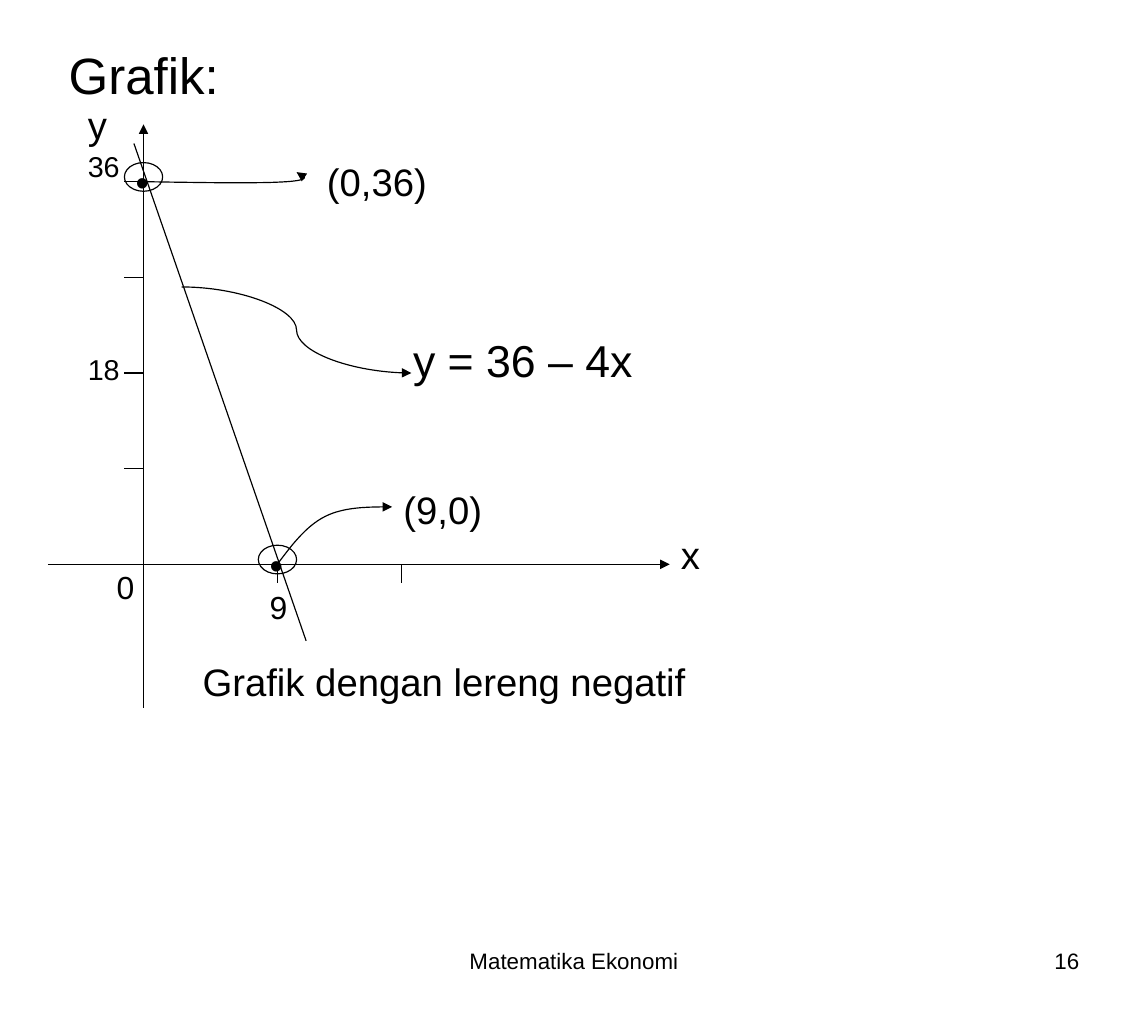
from lxml import etree
from pptx import Presentation
from pptx.dml.color import RGBColor
from pptx.enum.shapes import MSO_CONNECTOR, MSO_SHAPE
from pptx.enum.text import PP_ALIGN
from pptx.oxml.ns import qn
from pptx.util import Pt

PX = 7620  # 120 px to the inch
COLORS = {"ink": "000000", "paper": "FFFFFF"}
INK = RGBColor.from_string(COLORS["ink"])
LEFT, CENTER, RIGHT = PP_ALIGN.LEFT, PP_ALIGN.CENTER, PP_ALIGN.RIGHT
STRAIGHT, CURVE = MSO_CONNECTOR.STRAIGHT, MSO_CONNECTOR.CURVE
OVAL = MSO_SHAPE.OVAL
CURVE_STEPS = 16

deck = Presentation()
deck.slide_width, deck.slide_height = 1200 * PX, 1080 * PX
page = deck.slides.add_slide(deck.slide_layouts[6])
page.background.fill.solid()
page.background.fill.fore_color.rgb = RGBColor.from_string(COLORS["paper"])
shapes = page.shapes


def add_text(text, left, top, width, height, size=24, align=LEFT):
    box = shapes.add_textbox(left * PX, top * PX, width * PX, height * PX)
    box.text_frame.word_wrap = True
    para = box.text_frame.paragraphs[0]
    para.alignment = align
    span = para.add_run()
    span.text = text
    span.font.name = "Arial"
    span.font.size = Pt(size)
    span.font.color.rgb = INK


def style_line(shape, arrow=False):
    shape.line.color.rgb = INK
    shape.line.width = Pt(0.75)
    properties = shape._element.spPr
    if properties.find(qn("a:effectLst")) is None:
        etree.SubElement(properties, qn("a:effectLst"))
    if arrow:
        outline = properties.find(qn("a:ln"))
        etree.SubElement(outline, qn("a:tailEnd"), type="triangle")


# Title and footer
add_text("Grafik:", 60, 40, 1080, 90, size=32)
add_text("Matematika Ekonomi", 410, 984, 380, 74, size=14, align=CENTER)
add_text("16", 860, 984, 280, 74, size=14, align=RIGHT)

# Axes, ticks, sloping line and the curve to the equation
origin_x, origin_y = 150, 590
lines = [
    (STRAIGHT, origin_x, 740, origin_x, 130, True),
    (STRAIGHT, 50, origin_y, 700, origin_y, True),
    (STRAIGHT, 140, 150, 320, 670, False),
    (CURVE, 190, 300, 430, 390, True),
]
lines += [(STRAIGHT, 130, y, origin_x, y, False) for y in range(190, origin_y, 100)]
lines += [(STRAIGHT, x, origin_y, x, 610, False) for x in (290, 420)]
for kind, x1, y1, x2, y2, arrow in lines:
    connector = shapes.add_connector(kind, x1 * PX, y1 * PX, x2 * PX, y2 * PX)
    style_line(connector, arrow)

# Rings around the intercepts
for left, top in ((130, 170), (270, 570)):
    ring = shapes.add_shape(OVAL, left * PX, top * PX, 40 * PX, 30 * PX)
    ring.shadow.inherit = False
    ring.fill.background()
    style_line(ring)

# Curved pointers from the intercepts, as chains of cubic Bézier curves
pointers = [
    [(150, 190), (211, 191), (273, 192), (300, 190), (327, 188), (318, 184), (310, 180)],
    [(290, 590), (305, 570), (320, 550), (340, 540), (360, 530), (385, 530), (410, 530)],
]
for controls in pointers:
    points = []
    for first in range(0, len(controls) - 1, 3):
        for step in range(1, CURVE_STEPS + 1):
            t = step / CURVE_STEPS
            weights = ((1 - t) ** 3, 3 * t * (1 - t) ** 2, 3 * t * t * (1 - t), t ** 3)
            segment = list(zip(weights, controls[first:first + 4]))
            points.append([sum(w * p[axis] for w, p in segment) * PX for axis in (0, 1)])
    start_x, start_y = controls[0]
    builder = shapes.build_freeform(start_x * PX, start_y * PX)
    builder.add_line_segments(points, close=False)
    pointer = builder.convert_to_shape()
    pointer.shadow.inherit = False
    pointer.fill.background()
    style_line(pointer, arrow=True)

# Axis labels, points and captions
labels = [
    ("y", 80, 100, 60, 60, 24),
    ("x", 700, 550, 60, 60, 24),
    ("36", 80, 150, 60, 48, 18),
    ("18", 80, 362, 60, 48, 18),
    ("0", 110, 588, 40, 52, 20),
    ("9", 270, 608, 60, 52, 20),
    ("•", 130, 160, 32, 60, 24),
    ("•", 270, 560, 60, 60, 24),
    ("(0,36)", 330, 160, 130, 60, 24),
    ("(9,0)", 410, 502, 130, 60, 24),
    ("y = 36 – 4x", 420, 342, 360, 68, 28),
    ("Grafik dengan lereng negatif", 200, 682, 620, 60, 24),
]
for text, left, top, width, height, size in labels:
    add_text(text, left, top, width, height, size=size)

deck.save("out.pptx")
